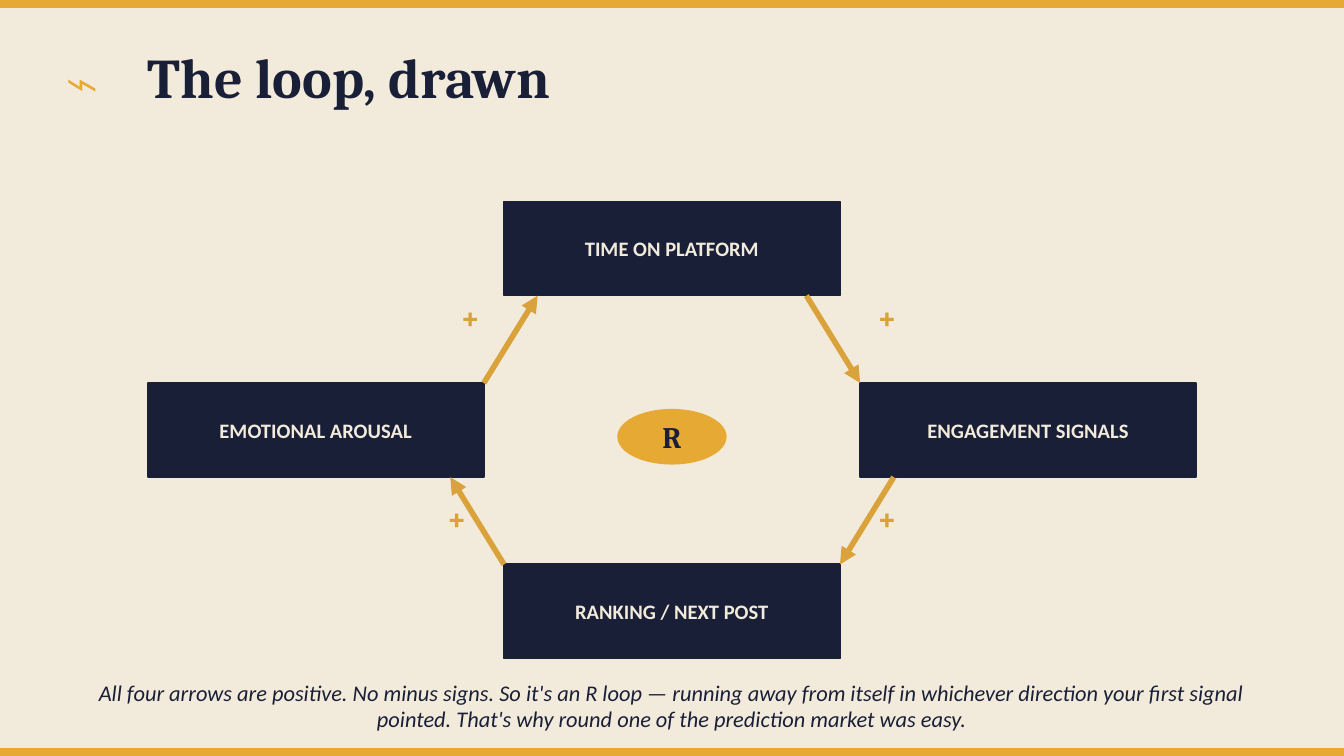
from pptx import Presentation
from pptx.dml.color import RGBColor
from pptx.enum.shapes import MSO_CONNECTOR, MSO_SHAPE
from pptx.enum.text import MSO_ANCHOR, MSO_AUTO_SIZE, PP_ALIGN
from pptx.oxml.ns import qn
from pptx.util import Inches, Pt
from lxml.etree import SubElement

CREAM = RGBColor(0xF2, 0xEB, 0xDB)
NAVY = RGBColor(0x1A, 0x1F, 0x38)
GOLD = RGBColor(0xE5, 0xA9, 0x34)
OCHRE = RGBColor(0xD9, 0xA2, 0x3A)


def write(shape, text, size, color, face="Cambria", bold=True, italic=False,
          align=PP_ALIGN.CENTER, anchor=MSO_ANCHOR.MIDDLE):
    frame = shape.text_frame
    frame.text = text
    frame.word_wrap = True
    frame.auto_size = MSO_AUTO_SIZE.NONE
    frame.vertical_anchor = anchor
    frame.margin_left = frame.margin_right = 0
    frame.margin_top = frame.margin_bottom = 0
    line = frame.paragraphs[0]
    line.alignment = align
    font = line.runs[0].font
    font.name, font.size, font.color.rgb = face, Pt(size), color
    font.bold, font.italic = bold, italic


def block(kind, left, top, width, height, color):
    """Add a preset shape with fill and outline in one colour."""
    shape = slide.shapes.add_shape(kind, left, top, width, height)
    shape.shadow.inherit = False
    shape.fill.solid()
    shape.fill.fore_color.rgb = color
    shape.line.color.rgb = color
    shape.line.width = Pt(1)
    return shape


deck = Presentation()
deck.slide_width = Inches(10)
deck.slide_height = deck.slide_width * 9 // 16
slide = deck.slides.add_slide(deck.slide_layouts[5])
slide.background.fill.solid()
slide.background.fill.fore_color.rgb = CREAM

# Bars, title and caption
thick = Inches(0.05)
for top in (0, deck.slide_height - thick):
    block(MSO_SHAPE.RECTANGLE, 0, top, deck.slide_width, thick, GOLD)

title = slide.shapes.title
title.left, title.top = Inches(1.1), Inches(0.32)
title.width, title.height = Inches(8.5), Inches(0.7)
write(title, "The loop, drawn", 30, NAVY,
      align=PP_ALIGN.LEFT, anchor=MSO_ANCHOR.TOP)

icon = slide.shapes.add_textbox(
    Inches(0.5), Inches(0.32), Inches(0.6), Inches(0.7))
write(icon, "⌁", 36, GOLD, align=PP_ALIGN.LEFT, anchor=MSO_ANCHOR.TOP)

note = slide.shapes.add_textbox(
    Inches(0.5), Inches(5.05), Inches(9), Inches(0.5))
write(note, "All four arrows are positive. No minus signs. So it's an R loop — "
      "running away from itself in whichever direction your first signal "
      "pointed. That's why round one of the prediction market was easy.",
      12, NAVY, "Calibri", bold=False, italic=True, anchor=MSO_ANCHOR.TOP)

# Stages, clockwise from the top
stages = [
    ("TIME ON PLATFORM", 3.75, 1.5),
    ("ENGAGEMENT SIGNALS", 6.4, 2.85),
    ("RANKING / NEXT POST", 3.75, 4.2),
    ("EMOTIONAL AROUSAL", 1.1, 2.85),
]
for name, left, top in stages:
    box = block(MSO_SHAPE.RECTANGLE, Inches(left), Inches(top),
                Inches(2.5), Inches(0.7), NAVY)
    write(box, name, 11, CREAM, "Calibri")

# Arrows: start, end, then left and top of the plus sign
links = [
    (6, 2.2, 6.4, 2.85, 6.4, 2.15),
    (6.65, 3.55, 6.25, 4.2, 6.4, 3.65),
    (3.75, 4.2, 3.35, 3.55, 3.2, 3.65),
    (3.6, 2.85, 4, 2.2, 3.3, 2.15),
]
for x1, y1, x2, y2, left, top in links:
    arrow = slide.shapes.add_connector(
        MSO_CONNECTOR.STRAIGHT, Inches(x1), Inches(y1), Inches(x2), Inches(y2))
    arrow.line.color.rgb = OCHRE
    arrow.line.width = Pt(3)
    SubElement(arrow.line._get_or_add_ln(), qn("a:tailEnd"), type="triangle")
    SubElement(arrow._element.spPr, qn("a:effectLst"))
    sign = slide.shapes.add_textbox(
        Inches(left), Inches(top), Inches(0.4), Inches(0.4))
    write(sign, "+", 18, OCHRE)

badge = block(MSO_SHAPE.OVAL, Inches(4.6), Inches(3.05),
              Inches(0.8), Inches(0.4), GOLD)
write(badge, "R", 16, NAVY)

deck.save("out.pptx")
